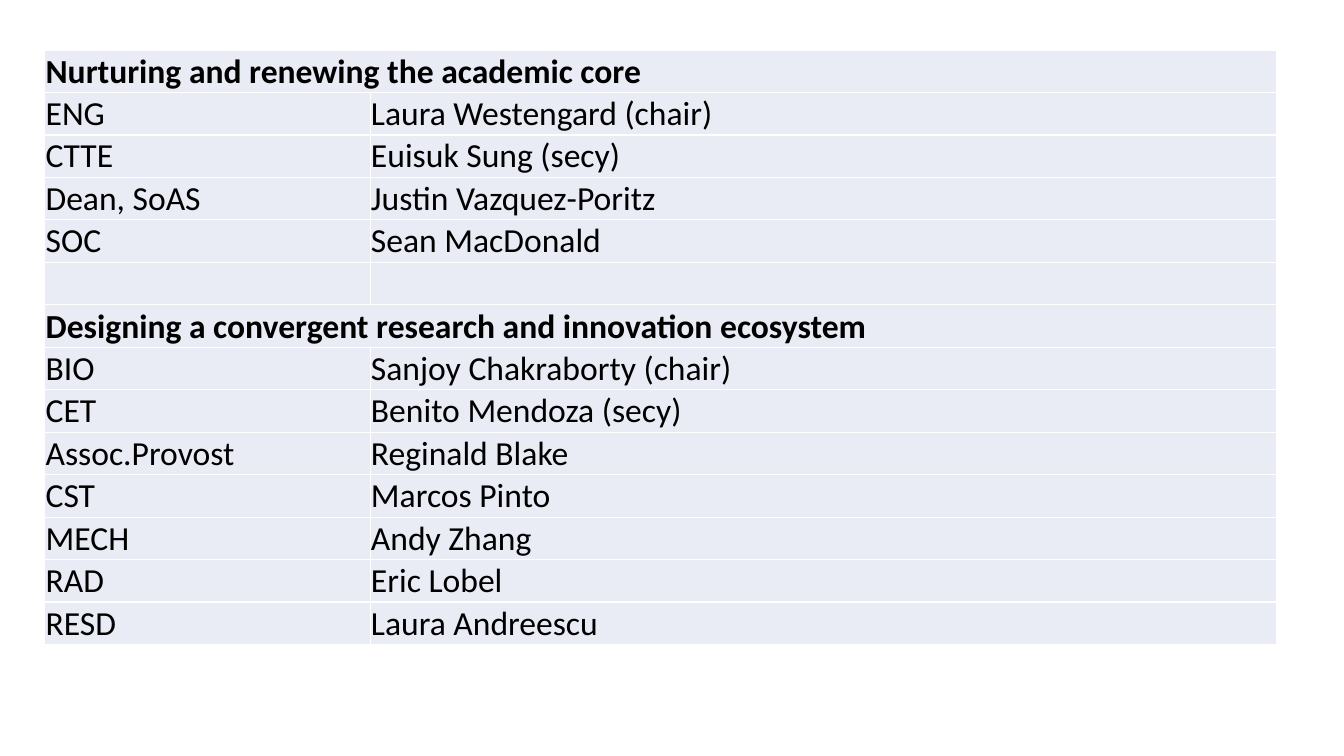
from lxml import etree
from pptx import Presentation
from pptx import util as u
from pptx.dml.color import RGBColor
from pptx.enum import text
from pptx.oxml import ns

BLACK = RGBColor(0x00, 0x00, 0x00)
WHITE = RGBColor(0xFF, 0xFF, 0xFF)
PALE_BLUE = RGBColor(0xE9, 0xEB, 0xF5)

# A row with one entry is a heading across the table; an empty row is a gap
COMMITTEES = [
    ("Nurturing and renewing the academic core",),
    ("ENG", "Laura Westengard (chair)"),
    ("CTTE", "Euisuk Sung (secy)"),
    ("Dean, SoAS", "Justin Vazquez-Poritz"),
    ("SOC", "Sean MacDonald"),
    (),
    ("Designing a convergent research and innovation ecosystem",),
    ("BIO", "Sanjoy Chakraborty (chair)"),
    ("CET", "Benito Mendoza (secy)"),
    ("Assoc.Provost", "Reginald Blake"),
    ("CST", "Marcos Pinto"),
    ("MECH", "Andy Zhang"),
    ("RAD", "Eric Lobel"),
    ("RESD", "Laura Andreescu"),
]


def write(paragraph, words, font="Calibri", size=24, color=BLACK, bold=False):
    run = paragraph.add_run()
    run.text = words
    run.font.name = font
    run.font.size = u.Pt(size)
    run.font.color.rgb = color
    run.font.bold = bold


class SlideBuilder:
    """Holds the table style and the current slide."""

    fill = PALE_BLUE
    border = WHITE
    border_width = u.Pt(1)
    inset = u.Cm(0.02)

    def __init__(self, slide):
        self.slide = slide

    def style_cell(self, cell):
        cell.margin_left = cell.margin_top = cell.margin_right = self.inset
        cell.margin_bottom = 0
        cell.vertical_anchor = text.MSO_ANCHOR.MIDDLE
        properties = cell._tc.get_or_add_tcPr()
        for side in ("lnL", "lnR", "lnT", "lnB"):
            line = etree.SubElement(properties, ns.qn(f"a:{side}"), w=str(self.border_width))
            solid = etree.SubElement(line, ns.qn("a:solidFill"))
            etree.SubElement(solid, ns.qn("a:srgbClr"), val=str(self.border))
        cell.fill.solid()
        cell.fill.fore_color.rgb = self.fill

    def add_table(self, rows, left, top, widths, row_height):
        frame = self.slide.shapes.add_table(
            len(rows), len(widths), left, top, sum(widths), row_height * len(rows))
        table = frame.table
        table.first_row = table.horz_banding = False
        for column, width in zip(table.columns, widths):
            column.width = width
        for row, entries in zip(table.rows, rows):
            row.height = row_height
            for cell in row.cells:
                self.style_cell(cell)
            is_heading = len(entries) == 1
            if is_heading:
                row.cells[0].merge(row.cells[len(widths) - 1])
            for cell, words in zip(row.cells, entries):
                write(cell.text_frame.paragraphs[0], words, bold=is_heading)
        return table


def main():
    presentation = Presentation()
    presentation.slide_width = u.Cm(33.87)
    presentation.slide_height = u.Cm(19.05)
    blank_layout = presentation.slide_layouts[6]
    builder = SlideBuilder(presentation.slides.add_slide(blank_layout))

    # Committee members by department
    table = builder.add_table(COMMITTEES, u.Cm(1.13), u.Cm(1.26),
                              widths=(u.Cm(8.2), u.Cm(22.84)), row_height=u.Cm(1.07))
    second_heading = table.cell(6, 0)
    second_heading.vertical_anchor = text.MSO_ANCHOR.BOTTOM

    presentation.save("out.pptx")


if __name__ == "__main__":
    main()
